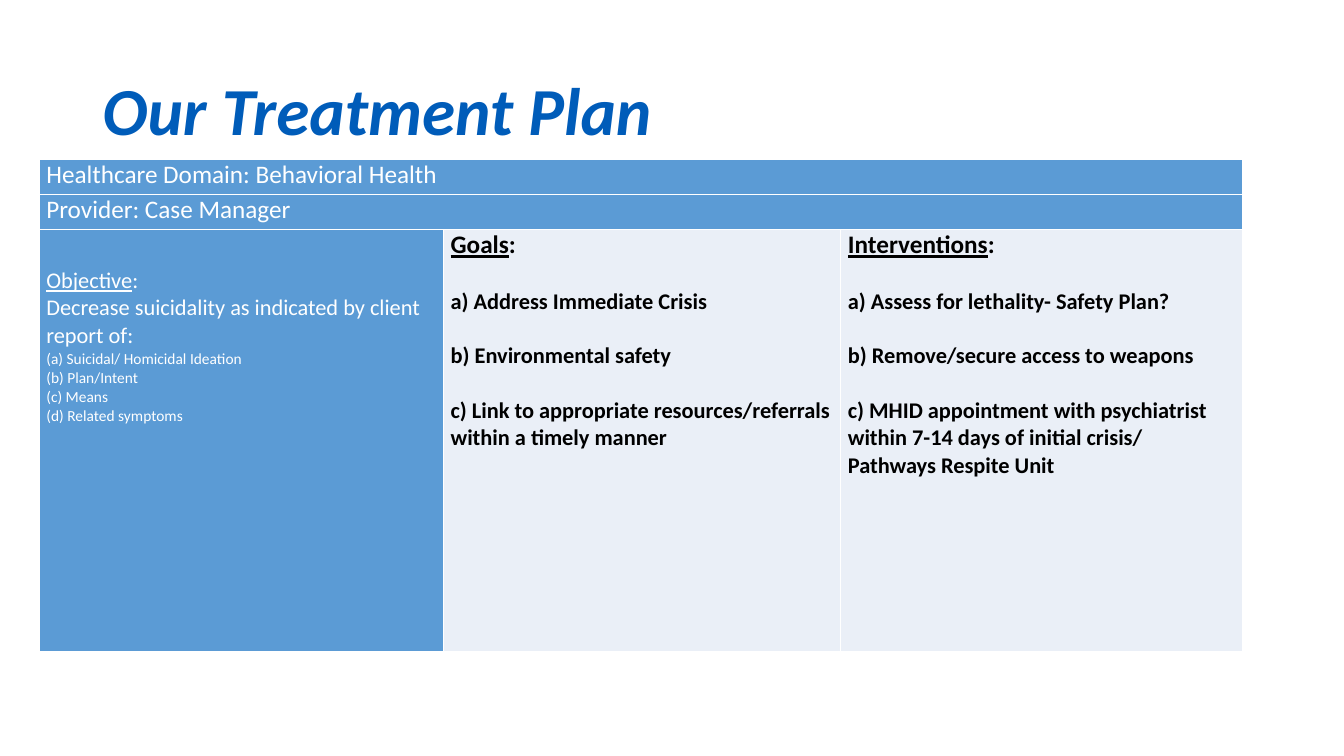
from lxml.etree import SubElement
from pptx import Presentation
from pptx.dml.color import RGBColor
from pptx.enum.text import MSO_ANCHOR
from pptx.oxml.ns import qn
from pptx.util import Inches, Pt

COLORS = {"title": "005CB9", "head": "5B9BD5", "body": "EAEFF7",
          "white": "FFFFFF", "black": "000000"}
LIGHT = {"size": Pt(18), "color": "white"}
OBJECTIVE = {"size": Pt(16), "color": "white"}
SYMPTOM = {"size": Pt(11), "color": "white"}
HEADING = {"size": Pt(18), "color": "black", "bold": True}
ITEM = {"size": Pt(16), "color": "black", "bold": True}
UNDERLINE = {"underline": True}
ITEM_GAP = 19.5


class SlideBuilder:
    def __init__(self, prs, font="Calibri"):
        self.s = prs.slides.add_slide(prs.slide_layouts[6])
        self.font = font

    def run(self, p, text, style):
        r = p.add_run()
        r.text = text
        r.font.name = self.font
        for name, value in style.items():
            if name == "color":
                r.font.color.rgb = RGBColor.from_string(COLORS[value])
            else:
                setattr(r.font, name, value)

    def paragraphs(self, tf, items):
        """Write items of (runs, space before in points); a run is (text, style)."""
        for i, (runs, gap) in enumerate(items):
            p = tf.add_paragraph() if i else tf.paragraphs[0]
            if gap:
                p.space_before = Pt(gap)
            for text, style in runs:
                self.run(p, text, style)

    def title(self, text, box, style):
        tf = self.s.shapes.add_textbox(*map(Inches, box)).text_frame
        tf.word_wrap = True
        tf.vertical_anchor = MSO_ANCHOR.MIDDLE
        self.paragraphs(tf, [([(text, style)], 0)])
        tf.paragraphs[0].line_spacing = 0.9

    def borders(self, cell, width=Pt(1)):
        tcPr = cell._tc.get_or_add_tcPr()
        for tag in ("a:lnL", "a:lnR", "a:lnT", "a:lnB"):
            ln = SubElement(tcPr, qn(tag), w=str(width))
            fill = SubElement(ln, qn("a:solidFill"))
            SubElement(fill, qn("a:srgbClr"), val=COLORS["white"])

    def cell(self, cell, fill):
        for name, value in {"margin_left": 0.07, "margin_right": 0.07,
                            "margin_top": 0, "margin_bottom": 0}.items():
            setattr(cell, name, Inches(value))
        self.borders(cell)
        cell.fill.solid()
        cell.fill.fore_color.rgb = RGBColor.from_string(COLORS[fill])

    def table(self, left, top, widths, heights, head_rows):
        table = self.s.shapes.add_table(
            len(heights), len(widths), Inches(left), Inches(top),
            Inches(sum(widths)), Inches(sum(heights))).table
        table.first_row = table.horz_banding = False
        for column, width in zip(table.columns, widths):
            column.width = Inches(width)
        for i, (row, height) in enumerate(zip(table.rows, heights)):
            row.height = Inches(height)
            for j, cell in enumerate(row.cells):
                self.cell(cell, "head" if i < head_rows or j == 0 else "body")
        for i in range(head_rows):
            table.cell(i, 0).merge(table.cell(i, len(widths) - 1))
        return table


def underlined(text, style):
    return [(text, style | UNDERLINE), (":", style)]


def plan_column(heading, entries):
    return [(underlined(heading, HEADING), 0)] + [
        ([(entry, ITEM)], ITEM_GAP) for entry in entries]


def main():
    prs = Presentation()
    prs.slide_width, prs.slide_height = Inches(13.33), Inches(7.5)
    slide = SlideBuilder(prs)
    slide.title("Our Treatment Plan", (0.92, 0.4, 11.5, 1.45),
                {"size": Pt(48), "color": "title", "bold": True, "italic": True})
    table = slide.table(0.39, 1.58, (4.01, 3.94, 3.98), (0.35, 0.35, 4.18), 2)

    for i, text in enumerate(("Healthcare Domain: Behavioral Health",
                              "Provider: Case Manager")):
        slide.paragraphs(table.cell(i, 0).text_frame, [([(text, LIGHT)], 0)])

    symptoms = ("(a) Suicidal/ Homicidal Ideation", "(b) Plan/Intent",
                "(c) Means", "(d) Related symptoms")
    objective = [
        (underlined("Objective", OBJECTIVE), 0),
        ([("Decrease suicidality as indicated by client report of:", OBJECTIVE)], 0),
    ] + [([(symptom, SYMPTOM)], 0) for symptom in symptoms]
    goals = plan_column("Goals", (
        "a) Address Immediate Crisis",
        "b) Environmental safety",
        "c) Link to appropriate resources/referrals within a timely manner"))
    interventions = plan_column("Interventions", (
        "a) Assess for lethality- Safety Plan?",
        "b) Remove/secure access to weapons",
        "c) MHID appointment with psychiatrist within 7-14 days of initial "
        "crisis/ Pathways Respite Unit"))
    for j, items in enumerate((objective, goals, interventions)):
        slide.paragraphs(table.cell(2, j).text_frame, items)
    table.cell(2, 0).margin_top = Inches(0.37)

    prs.save("out.pptx")


if __name__ == "__main__":
    main()
